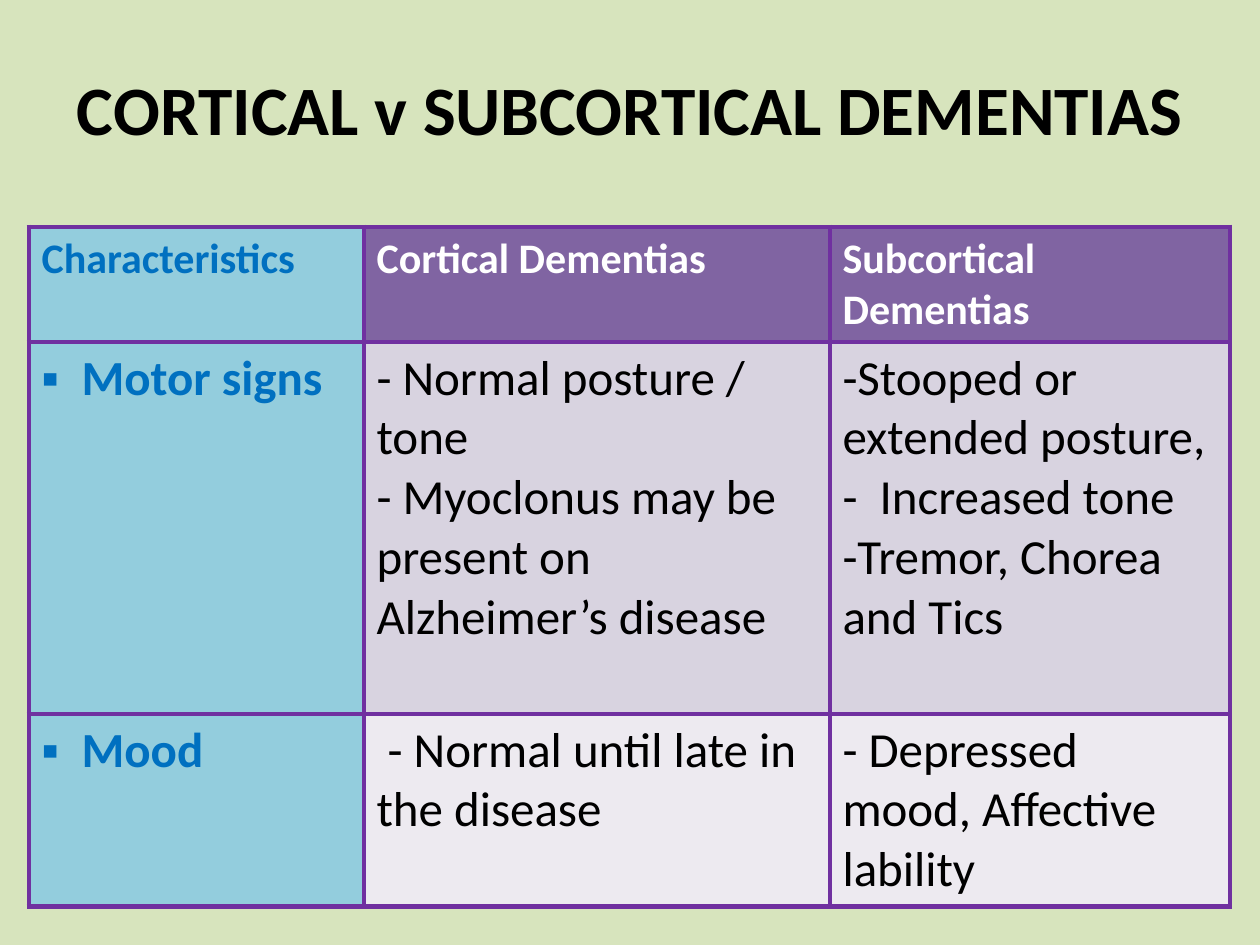
from lxml.etree import SubElement
from pptx import Presentation
from pptx.dml.color import RGBColor
from pptx.enum.text import MSO_ANCHOR, PP_ALIGN
from pptx.oxml import parse_xml
from pptx.oxml.ns import nsdecls, qn
from pptx.util import Pt

EMU_PER_PX = 914400 // 126

BACKGROUND = RGBColor(0xD7, 0xE4, 0xBD)
BLACK = RGBColor(0x00, 0x00, 0x00)
WHITE = RGBColor(0xFF, 0xFF, 0xFF)
BLUE = RGBColor(0x00, 0x70, 0xC0)
BORDER = RGBColor(0x70, 0x30, 0xA0)
LABEL_FILL = RGBColor(0x93, 0xCD, 0xDD)
HEADER_FILL = RGBColor(0x80, 0x64, 0xA2)
DARK_BAND = RGBColor(0xD8, 0xD3, 0xE0)
LIGHT_BAND = RGBColor(0xED, 0xEA, 0xF0)

COLUMN_WIDTHS = [335, 466, 400]
ROW_HEIGHTS = [114, 372, 133]
ROW_FILLS = [HEADER_FILL, DARK_BAND, LIGHT_BAND]
SQUARE, DASH = "▪", "-"

# Each cell is a bullet (or None) and its paragraphs.
ROWS = [
    [(None, ["Characteristics"]),
     (None, ["Cortical Dementias"]),
     (None, ["Subcortical Dementias"])],
    [(SQUARE, ["Motor signs"]),
     (DASH, [" Normal posture / tone",
             " Myoclonus may be present on Alzheimer’s disease"]),
     (DASH, ["Stooped or extended posture,", "  Increased tone",
             "Tremor, Chorea and Tics"])],
    [(SQUARE, ["Mood"]),
     (None, [" - Normal until late in the disease"]),
     (None, ["- Depressed mood, Affective lability"])],
]


def px(length):
    return length * EMU_PER_PX


class SlideBuilder:
    font_name = "Calibri"
    border_width = Pt(3)
    bullet_indents = {SQUARE: 40, DASH: 0}

    def __init__(self, presentation):
        self.slide = presentation.slides.add_slide(presentation.slide_layouts[5])
        fill = self.slide.background.fill
        fill.solid()
        fill.fore_color.rgb = BACKGROUND

    def style(self, paragraph, size, color, bold):
        font = paragraph.font
        font.name = self.font_name
        font.size = Pt(size)
        font.bold = bold
        font.color.rgb = color

    def title(self, text, left, top, width, height):
        title = self.slide.shapes.title
        title.left, title.top = px(left), px(top)
        title.width, title.height = px(width), px(height)
        frame = title.text_frame
        frame.text = text
        frame.vertical_anchor = MSO_ANCHOR.MIDDLE
        paragraph = frame.paragraphs[0]
        paragraph.alignment = PP_ALIGN.CENTER
        self.style(paragraph, 39.6, BLACK, True)

    def bullet(self, paragraph, character):
        properties = paragraph._p.get_or_add_pPr()
        indent = px(self.bullet_indents[character])
        properties.set("marL", str(indent))
        properties.set("indent", str(-indent))
        properties.insert(0, parse_xml(
            f'<a:buFont {nsdecls("a")} typeface="{self.font_name}"/>'))
        properties.insert(1, parse_xml(
            f'<a:buChar {nsdecls("a")} char="{character}"/>'))

    def borders(self, cell):
        properties = cell._tc.get_or_add_tcPr()
        for index, side in enumerate(("lnL", "lnR", "lnT", "lnB")):
            line = parse_xml(
                f'<a:{side} {nsdecls("a")} w="{int(self.border_width)}"/>')
            solid = SubElement(line, qn("a:solidFill"))
            SubElement(solid, qn("a:srgbClr"), val=str(BORDER))
            properties.insert(index, line)

    def cell(self, cell, content, fill, size, color, bold):
        character, lines = content
        cell.text = "\n".join(lines)
        cell.fill.solid()
        cell.fill.fore_color.rgb = fill
        self.borders(cell)
        for paragraph in cell.text_frame.paragraphs:
            self.style(paragraph, size, color, bold)
            if character:
                self.bullet(paragraph, character)

    def table(self, rows, left, top):
        """Add a table with a header row and a column of row labels."""
        table = self.slide.shapes.add_table(
            len(rows), len(COLUMN_WIDTHS), px(left), px(top),
            px(sum(COLUMN_WIDTHS)), px(sum(ROW_HEIGHTS))).table
        for column, width in zip(table.columns, COLUMN_WIDTHS):
            column.width = px(width)
        for r, contents in enumerate(rows):
            table.rows[r].height = px(ROW_HEIGHTS[r])
            is_header = r == 0
            for c, content in enumerate(contents):
                is_label = c == 0
                fill = LABEL_FILL if is_label else ROW_FILLS[r]
                color = BLUE if is_label else WHITE if is_header else BLACK
                self.cell(table.cell(r, c), content, fill,
                          24 if is_header else 28, color, is_header or is_label)


def main():
    presentation = Presentation()
    presentation.slide_width, presentation.slide_height = px(1260), px(945)
    builder = SlideBuilder(presentation)
    builder.title("CORTICAL v SUBCORTICAL DEMENTIAS", 63, 38, 1134, 140)
    builder.table(ROWS, 29, 227)
    presentation.save("out.pptx")


if __name__ == "__main__":
    main()
